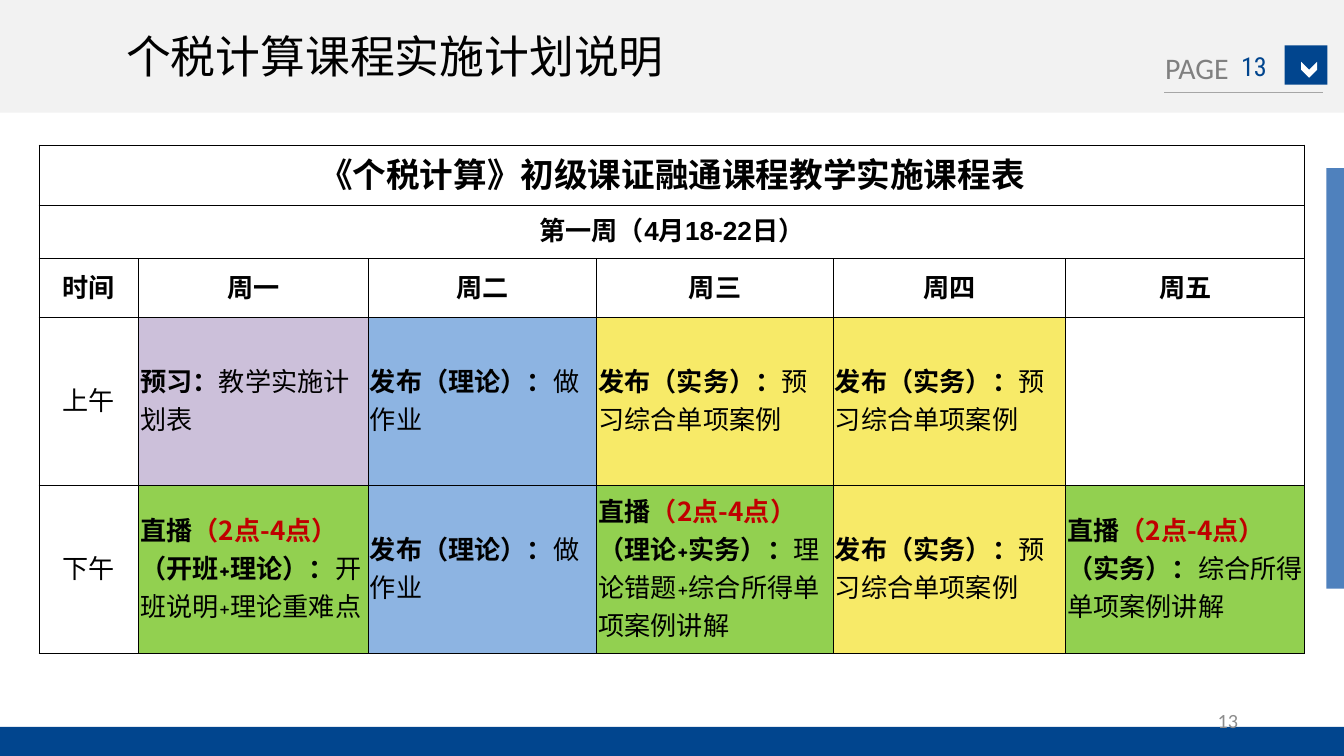
from lxml import etree
from pptx import Presentation, util as u
from pptx.dml.color import RGBColor
from pptx.enum import shapes, text
from pptx.oxml.ns import qn

NAVY, BLACK, RED = "01458E", "000000", "C00000"
PURPLE, BLUE, YELLOW, GREEN = "CCC0DA", "8DB4E2", "F7EA68", "92D050"
CJK, LATIN = "Noto Sans CJK SC", "Comic Neue"
LEFT, CENTER, RIGHT = text.PP_ALIGN.LEFT, text.PP_ALIGN.CENTER, text.PP_ALIGN.RIGHT

COLUMNS = [1.88, 4.34, 4.32, 4.47, 4.39, 4.52]
ROWS = [1.15, 1.0, 1.12, 3.17, 3.17]


def color(value):
    return RGBColor.from_string(value)


def add_run(paragraph, words, size, font=CJK, fill=BLACK, bold=False):
    run = paragraph.add_run()
    run.text = words
    run.font.size = u.Pt(size)
    run.font.name = font
    run.font.bold = bold
    run.font.color.rgb = color(fill)
    properties = run.font._element
    etree.SubElement(properties, qn("a:ea"), typeface=CJK)


def add_block(slide, kind, box, fill, rotation=0):
    shape = slide.shapes.add_shape(kind, *map(u.Cm, box))
    shape.shadow.inherit = False
    shape.fill.solid()
    shape.fill.fore_color.rgb = color(fill)
    shape.line.fill.background()
    shape.rotation = rotation


def add_label(slide, box, words, size, font, fill, align=LEFT,
              anchor=text.MSO_ANCHOR.MIDDLE, wrap=True):
    frame = slide.shapes.add_textbox(*map(u.Cm, box)).text_frame
    frame.word_wrap = wrap
    frame.vertical_anchor = anchor
    frame.paragraphs[0].alignment = align
    add_run(frame.paragraphs[0], words, size, font, fill)


def add_rule(slide, left, right, top):
    line = slide.shapes.add_connector(
        shapes.MSO_CONNECTOR.STRAIGHT, u.Cm(left), u.Cm(top), u.Cm(right), u.Cm(top))
    line.line.color.rgb = color("A6A6A6")
    line.line.width = u.Pt(0.75)
    etree.SubElement(line._element.spPr, qn("a:effectLst"))


def add_title(slide, words):
    title = slide.shapes.title
    title.left, title.top, title.width, title.height = map(u.Cm, (2.13, 0.41, 14.76, 1.27))
    title.text_frame.vertical_anchor = text.MSO_ANCHOR.TOP
    paragraph = title.text_frame.paragraphs[0]
    paragraph.alignment = LEFT
    add_run(paragraph, words, 24, "Arial")


def add_borders(cell):
    properties = cell._tc.get_or_add_tcPr()
    for index, side in enumerate(("lnL", "lnR", "lnT", "lnB")):
        border = etree.Element(qn("a:" + side), w=str(u.Pt(0.5)))
        fill = etree.SubElement(border, qn("a:solidFill"))
        etree.SubElement(fill, qn("a:srgbClr"), val=BLACK)
        properties.insert(index, border)


def fill_cell(cell, runs, align=CENTER, fill=None, size=14):
    """Each run is its words followed by any options of add_run."""
    if fill:
        cell.fill.solid()
        cell.fill.fore_color.rgb = color(fill)
    paragraph = cell.text_frame.paragraphs[0]
    paragraph.alignment = align
    for words, options in runs:
        add_run(paragraph, words, size, **options)


def bold(words, **options):
    return words, dict(bold=True, **options)


def plain(words, **options):
    return words, options


def task(kind, content):
    return [bold(kind), plain(content)]


def live(*runs):
    return [bold("直播"), bold("（2点-4点）", fill=RED), *runs]


def add_timetable(slide):
    table = slide.shapes.add_table(
        len(ROWS), len(COLUMNS), u.Cm(0.74), u.Cm(2.74),
        u.Cm(sum(COLUMNS)), u.Cm(sum(ROWS))).table
    table.first_row = table.horz_banding = False
    for column, width in zip(table.columns, COLUMNS):
        column.width = u.Cm(width)
    for row, height in zip(table.rows, ROWS):
        row.height = u.Cm(height)
    for cell in table.iter_cells():
        cell.margin_left = cell.margin_right = cell.margin_top = u.Cm(0.03)
        cell.margin_bottom = u.Cm(0.13)
        cell.vertical_anchor = text.MSO_ANCHOR.MIDDLE
        cell.fill.background()
        add_borders(cell)

    # Heading rows
    headings = [("《个税计算》初级课证融通课程教学实施课程表", 18), ("第一周（4月18-22日）", 14)]
    for row, (words, size) in enumerate(headings):
        table.cell(row, 0).merge(table.cell(row, len(COLUMNS) - 1))
        fill_cell(table.cell(row, 0), [bold(words, font="Arial")], size=size)
    for column, words in enumerate(["时间", "周一", "周二", "周三", "周四", "周五"]):
        fill_cell(table.cell(2, column), [bold(words)])

    # Morning and afternoon
    theory = (BLUE, task("发布（理论）：", "做作业"))
    practice = (YELLOW, task("发布（实务）：", "预习综合单项案例"))
    opening = live(bold("（开班"), bold("+", font=LATIN), bold("理论）："),
                   plain("开班说明"), plain("+", font=LATIN), plain("理论重难点"))
    review = live(bold("（理论"), bold("+", font=LATIN), bold("实务）："),
                  plain("理论错题"), plain("+", font=LATIN), plain("综合所得单项案例讲解"))
    closing = live(bold("（实务）："), plain("综合所得单项案例讲解"))
    sessions = [
        ("上午", [(PURPLE, task("预习：", "教学实施计划表")), theory, practice, practice]),
        ("下午", [(GREEN, opening), theory, (GREEN, review), practice, (GREEN, closing)]),
    ]
    for row, (time, lessons) in enumerate(sessions, start=3):
        fill_cell(table.cell(row, 0), [plain(time)])
        for column, (fill, runs) in enumerate(lessons, start=1):
            fill_cell(table.cell(row, column), runs, LEFT, fill)


def main():
    presentation = Presentation()
    presentation.slide_width, presentation.slide_height = u.Cm(25.4), u.Cm(14.29)
    slide = presentation.slides.add_slide(presentation.slide_layouts[5])
    rectangle = shapes.MSO_SHAPE.RECTANGLE

    # Header and footer bands
    add_block(slide, rectangle, (0, 0, 25.4, 2.13), "F2F2F2")
    add_block(slide, rectangle, (0, 13.74, 25.4, 0.55), NAVY)

    # Page marker
    add_label(slide, (21.77, 0.81, 1.73, 0.94), "PAGE", 16, "Calibri", "808080",
              anchor=text.MSO_ANCHOR.TOP, wrap=False)
    add_block(slide, rectangle, (24.28, 0.86, 0.81, 0.74), NAVY)
    add_block(slide, shapes.MSO_SHAPE.CHEVRON, (24.59, 1.17, 0.3, 0.3), "FFFFFF", 90)
    add_rule(slide, 22, 25, 1.75)
    add_label(slide, (23.09, 0.86, 1.22, 0.76), "13", 14, "Roboto Condensed", NAVY, CENTER)

    # Side bar, title and page number
    add_block(slide, rectangle, (25.07, 3.18, 0.33, 7.95), "4F81BD")
    title = slide.shapes.title
    slide.shapes._spTree.append(title._element)
    add_title(slide, "个税计算课程实施计划说明")
    add_label(slide, (17.93, 13.23, 5.72, 0.76), "13", 10.8, "Calibri", "8C8C8C", RIGHT)

    add_timetable(slide)
    presentation.save("out.pptx")


if __name__ == "__main__":
    main()
